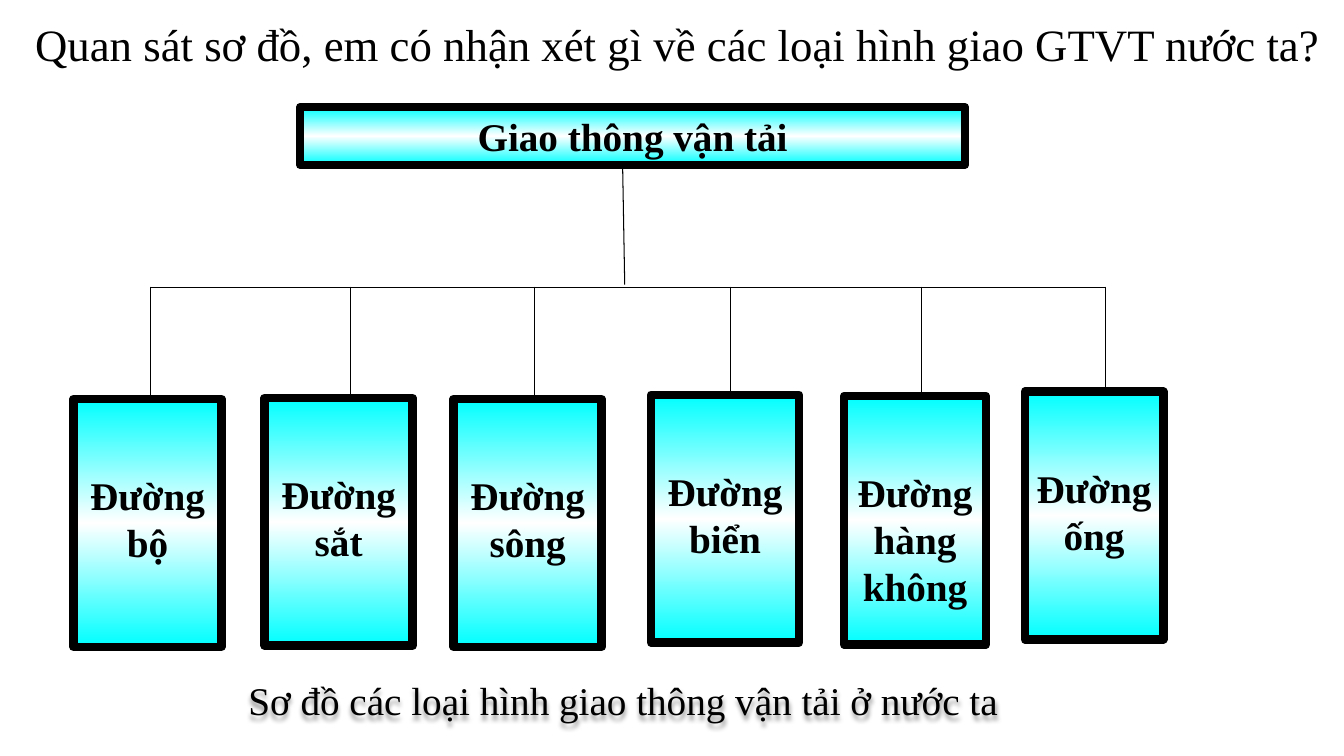
from copy import deepcopy

from lxml.etree import SubElement
from pptx import Presentation
from pptx.dml.color import RGBColor
from pptx.enum.shapes import MSO_CONNECTOR, MSO_SHAPE
from pptx.enum.text import MSO_ANCHOR as Anchor, PP_ALIGN as Align
from pptx.oxml.ns import qn
from pptx.util import Pt

PX = 9525  # EMU per px, 96 px to the inch
BLACK = RGBColor(0x00, 0x00, 0x00)
WHITE = RGBColor(0xFF, 0xFF, 0xFF)
CYAN = RGBColor(0x00, 0xFF, 0xFF)

QUESTION = "Quan sát sơ đồ, em có nhận xét gì về các loại hình giao GTVT nước ta?"
CAPTION = "Sơ đồ các loại hình giao thông vận tải ở nước ta"
ROOT = "Giao thông vận tải"
BAR_Y = 274
LABEL_INSET = 69
# Label, box (left, top, width, height), x of the line above it
BRANCHES = [
    ("Đường bộ", (70, 380, 141, 236), 143),
    ("Đường sắt", (252, 379, 141, 236), 334),
    ("Đường sông", (432, 380, 141, 236), 509),
    ("Đường biển", (620, 376, 141, 236), 696),
    ("Đường hàng không", (804, 377, 135, 237), 878),
    ("Đường ống", (976, 373, 132, 236), 1053),
]


def to_emu(lengths):
    return [length * PX for length in lengths]


def write_text(shape, text, size=28, bold=False, align=Align.CENTER,
               anchor=Anchor.TOP):
    frame = shape.text_frame
    frame.word_wrap = True
    frame.vertical_anchor = anchor
    paragraph = frame.paragraphs[0]
    paragraph.alignment = align
    run = paragraph.add_run()
    run.text = text
    font_format = {"name": "Times New Roman", "size": Pt(size), "bold": bold}
    for name, value in font_format.items():
        setattr(run.font, name, value)
    run.font.color.rgb = BLACK


def fill_gradient(shape):
    shape.fill.gradient()
    shape.fill.gradient_angle = 90
    stop_list = shape._element.spPr.find(qn("a:gradFill")).find(qn("a:gsLst"))
    stop_list.insert(1, deepcopy(stop_list[0]))
    stops = zip(shape.fill.gradient_stops, (0, 0.5, 1), (CYAN, WHITE, CYAN))
    for stop, position, color in stops:
        stop.position = position
        stop.color.rgb = color


def add_box(slide, box, text, anchor=Anchor.TOP, inset=5):
    shape = slide.shapes.add_shape(MSO_SHAPE.RECTANGLE, *to_emu(box))
    shape.shadow.inherit = False
    fill_gradient(shape)
    shape.line.color.rgb = BLACK
    shape.line.width = Pt(6)
    write_text(shape, text, bold=True, anchor=anchor)
    shape.text_frame.margin_top = inset * PX


def add_line(slide, *ends):
    line = slide.shapes.add_connector(MSO_CONNECTOR.STRAIGHT, *to_emu(ends))
    line.line.color.rgb = BLACK
    line.line.width = Pt(0.75)
    SubElement(line._element.spPr, qn("a:effectLst"))


def add_text(slide, box, text, **text_format):
    shape = slide.shapes.add_textbox(*to_emu(box))
    write_text(shape, text, **text_format)
    return shape


def add_soft_shadow(shape):
    effects = SubElement(shape._element.spPr, qn("a:effectLst"))
    shadow = SubElement(effects, qn("a:outerShdw"), blurRad="38100",
                        dist="38100", dir="5400000", algn="t", rotWithShape="0")
    color = SubElement(shadow, qn("a:srgbClr"), val=str(BLACK))
    SubElement(color, qn("a:alpha"), val="40000")


def add_diagram(slide, root_box):
    left, top, width, height = root_box
    add_box(slide, root_box, ROOT, anchor=Anchor.MIDDLE)
    # Branch boxes and the lines down to them
    for label, box, line_x in BRANCHES:
        add_box(slide, box, label, inset=LABEL_INSET)
        add_line(slide, line_x, BAR_Y - 1, line_x, box[1])
    # Shared bar and trunk
    add_line(slide, BRANCHES[0][2], BAR_Y, BRANCHES[-1][2], BAR_Y)
    trunk_x = left + width // 2 - 9
    add_line(slide, trunk_x, top + height, trunk_x + 2, BAR_Y - 3)


def main():
    presentation = Presentation()
    presentation.slide_width, presentation.slide_height = to_emu((1280, 720))
    slide = presentation.slides.add_slide(presentation.slide_layouts[6])
    caption = add_text(slide, (162, 639, 863, 55), CAPTION)
    add_soft_shadow(caption)
    add_diagram(slide, (286, 102, 633, 55))
    add_text(slide, (24, 11, 1244, 61), QUESTION, size=32, align=Align.LEFT)
    presentation.save("out.pptx")


if __name__ == "__main__":
    main()
